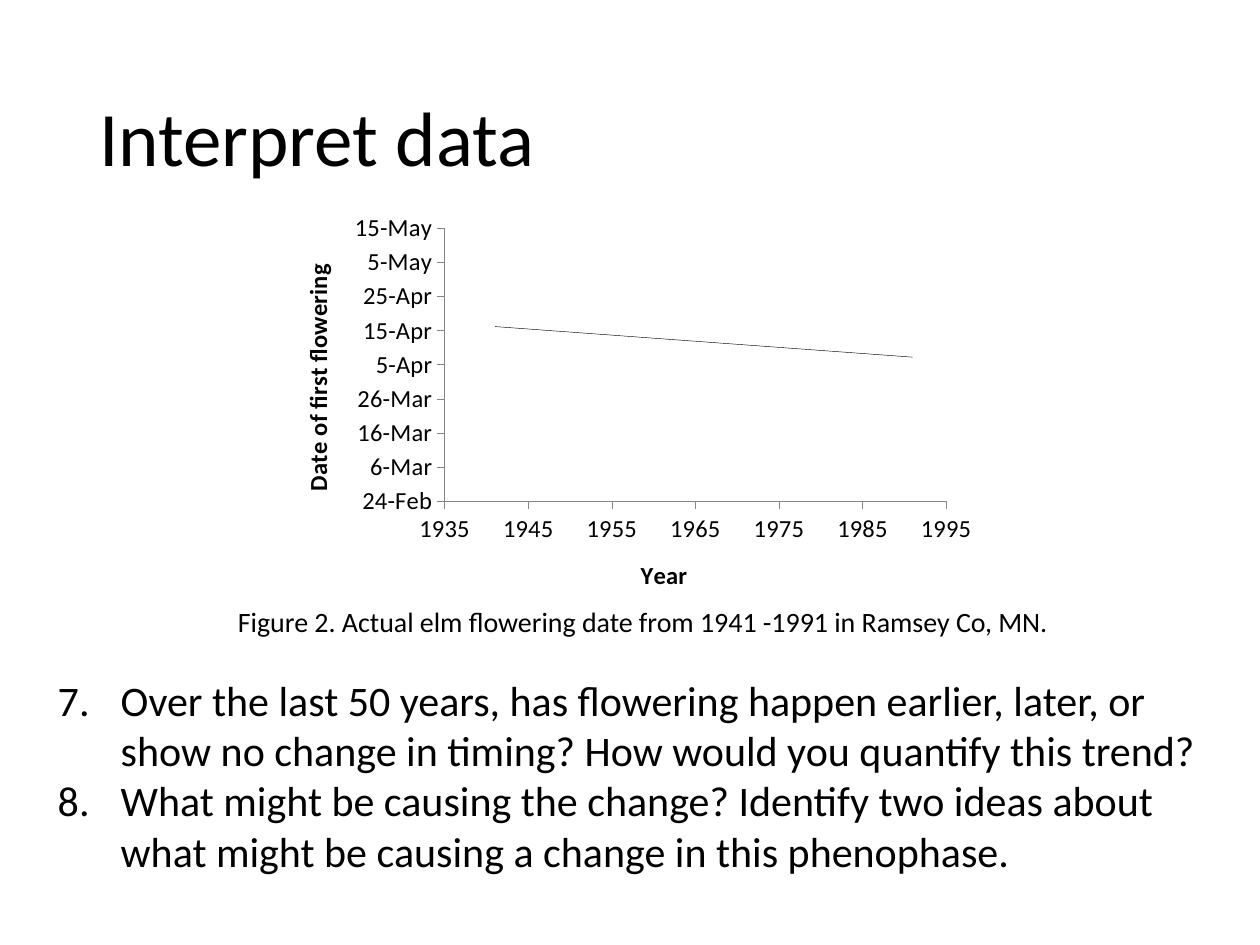
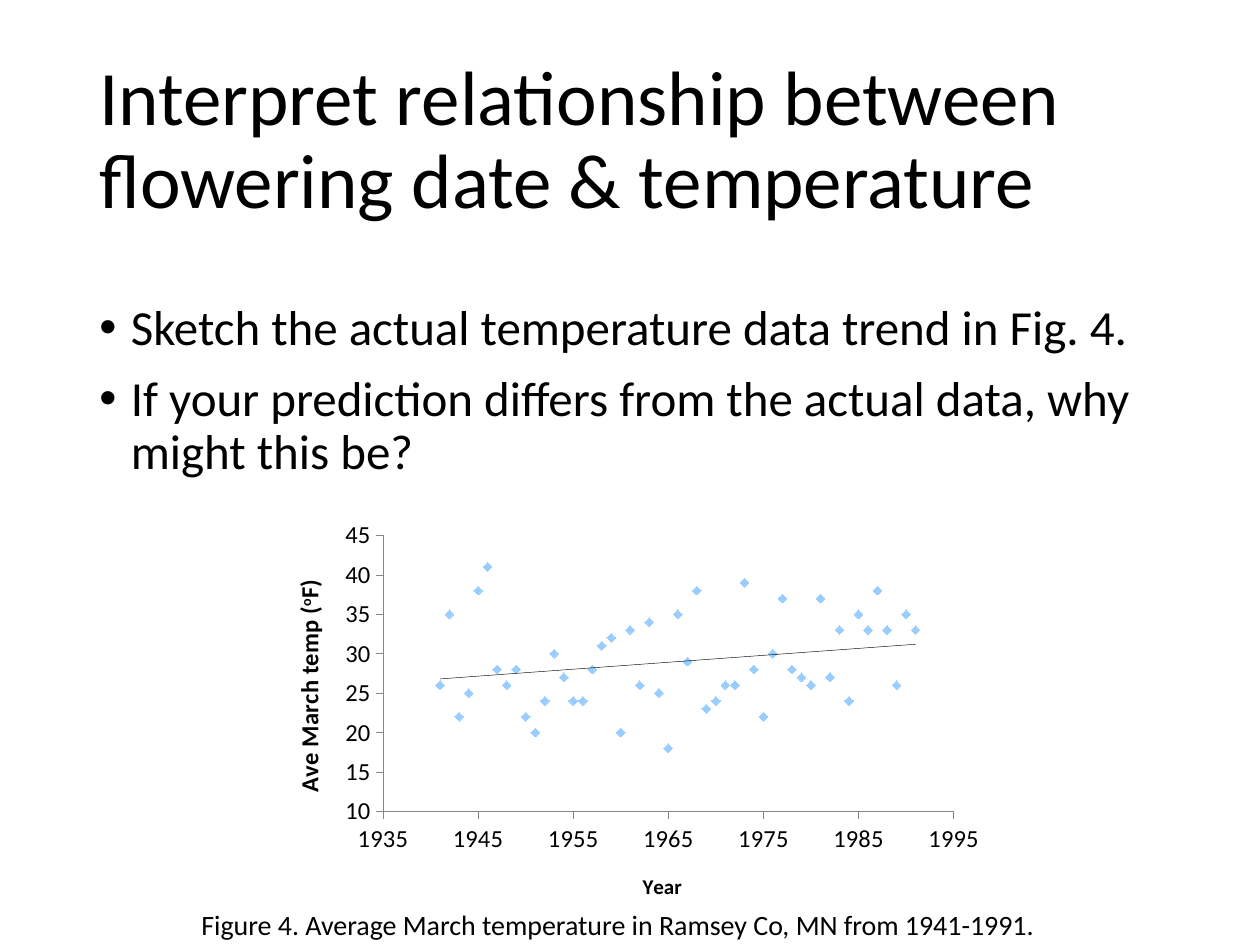
from lxml import etree
from pptx import Presentation
from pptx import util as u
from pptx.chart.data import XyChartData
from pptx.dml.color import RGBColor
from pptx.enum import chart as ch
from pptx.enum import text
from pptx.oxml import parse_xml
from pptx.oxml.ns import nsdecls, qn

BLACK, AXIS_GREY, SKY = "000000", "868686", "99CCFF"
HAIRLINE = u.Pt(0.25)
YEARS = range(1941, 1992)
MARCH_TEMPS = [
    26, 35, 22, 25, 38, 41, 28, 26, 28, 22, 20, 24, 30, 27, 24, 24, 28,
    31, 32, 20, 33, 26, 34, 25, 18, 35, 29, 38, 23, 24, 26, 26, 39, 28,
    22, 30, 37, 28, 27, 26, 37, 27, 33, 24, 35, 33, 38, 33, 26, 35, 33,
]
FEB_24 = 42790
FLOWERING_DATES = [round(FEB_24 + 51.2 - 0.18 * (year - 1941)) for year in YEARS]


def colour(hex_value):
    """Turn a hex string into a colour."""
    return RGBColor.from_string(hex_value)


def style_font(font, size, bold=False, hex_value=BLACK):
    """Give a font the deck's typeface with a size, weight and colour."""
    font.name, font.size, font.bold = "Calibri", u.Pt(size), bold
    font.color.rgb = colour(hex_value)


def add_run(paragraph, words, size, bold=False, superscript=False):
    """Append a formatted run to a paragraph."""
    run = paragraph.add_run()
    run.text = words
    style_font(run.font, size, bold)
    if superscript:
        run.font._element.set("baseline", "30000")


def set_list(paragraph, indent, bullet=None, start=None):
    """Give a paragraph a hanging indent with a bullet or a number."""
    props = paragraph._p.get_or_add_pPr()
    props.set("marL", str(u.Inches(indent)))
    props.set("indent", str(-u.Inches(indent)))
    if bullet:
        etree.SubElement(props, qn("a:buFont"), typeface="Arial")
        etree.SubElement(props, qn("a:buChar"), char=bullet)
    else:
        etree.SubElement(props, qn("a:buAutoNum"), type="arabicPeriod", startAt=str(start))


def place(parent, position, chart_size, left, top, *size):
    """Place a chart part by its offset, and its size if given, in inches."""
    width, height = chart_size
    parts = [("xMode", "edge"), ("yMode", "edge"), ("x", left / width), ("y", top / height)]
    if size:
        parts = [("layoutTarget", "inner"), *parts,
                 ("w", size[0] / width), ("h", size[1] / height)]
    body = "".join(f'<c:{tag} val="{value}"/>' for tag, value in parts)
    for old in parent.findall(qn("c:layout")):
        parent.remove(old)
    parent.insert(position, parse_xml(
        f"<c:layout {nsdecls('c')}><c:manualLayout>{body}</c:manualLayout></c:layout>"))


class Deck:
    """Hold the deck's style and its current slide."""

    def __init__(self):
        """Start an empty 10 by 7.5 inch presentation."""
        self.prs = Presentation()
        self.prs.slide_width, self.prs.slide_height = u.Inches(10), u.Inches(7.5)
        self.slide = None

    def new_slide(self, title):
        """Add a blank slide with its title."""
        self.slide = self.prs.slides.add_slide(self.prs.slide_layouts[6])
        self.add_text([title], (0.69, 0.4, 8.62, 1.45), size=44, spacing=0.9,
                      anchor=text.MSO_ANCHOR.MIDDLE)

    def add_text(self, lines, box, size, spacing=1.0, before=0,
                 anchor=text.MSO_ANCHOR.TOP, **list_format):
        """Add a text box with one paragraph per line."""
        frame = self.slide.shapes.add_textbox(*map(u.Inches, box)).text_frame
        frame.word_wrap, frame.vertical_anchor = True, anchor
        for index, line in enumerate(lines):
            paragraph = frame.add_paragraph() if index else frame.paragraphs[0]
            paragraph.line_spacing, paragraph.space_before = spacing, u.Pt(before)
            add_run(paragraph, line, size)
            if list_format:
                set_list(paragraph, **list_format)

    def add_caption(self, caption, box):
        """Add a figure caption."""
        self.add_text([caption], box, size=16, spacing=1.15)

    def style_axis(self, axis, chart_size, title, limits, step, title_at,
                   title_size=14, number_format="General"):
        """Set an axis's scale, line, labels and title of (words, superscript) pairs."""
        axis.minimum_scale, axis.maximum_scale = limits
        axis.major_unit = step
        axis.has_major_gridlines = False
        axis.major_tick_mark = ch.XL_TICK_MARK.OUTSIDE
        axis.minor_tick_mark = ch.XL_TICK_MARK.NONE
        axis.tick_label_position = ch.XL_TICK_LABEL_POSITION.LOW
        axis.format.line.color.rgb = colour(AXIS_GREY)
        axis.format.line.width = HAIRLINE
        style_font(axis.tick_labels.font, 14)
        axis.tick_labels.number_format = number_format
        axis.tick_labels.number_format_is_linked = False
        paragraph = axis.axis_title.text_frame.paragraphs[0]
        for words, superscript in title:
            add_run(paragraph, words, title_size, bold=True, superscript=superscript)
        place(axis.axis_title.element, 1, chart_size, *title_at)

    def add_trend_chart(self, values, box, plot, year_axis, value_axis, marker=None):
        """Add a scatter chart by year with a linear trend line."""
        data = XyChartData()
        points = data.add_series("Series 1")
        for year, value in zip(YEARS, values):
            points.add_data_point(year, value)
        chart = self.slide.shapes.add_chart(
            ch.XL_CHART_TYPE.XY_SCATTER, *map(u.Inches, box), data).chart
        chart.has_title = chart.has_legend = False
        style_font(chart.font, 10)
        chart.plots[0].vary_by_categories = False
        series = chart.plots[0].series[0]
        series.format.line.fill.background()
        series.marker.style = ch.XL_MARKER_STYLE.DIAMOND if marker else ch.XL_MARKER_STYLE.NONE
        if marker:
            series.marker.size = 5
            series.marker.format.fill.solid()
            series.marker.format.fill.fore_color.rgb = colour(marker)
            series.marker.format.line.fill.background()
        trend = parse_xml(
            f'<c:trendline {nsdecls("c", "a")}><c:spPr><a:ln w="{HAIRLINE}"><a:solidFill>'
            f'<a:srgbClr val="{BLACK}"/></a:solidFill></a:ln></c:spPr>'
            '<c:trendlineType val="linear"/><c:dispRSqr val="0"/><c:dispEq val="0"/></c:trendline>')
        chart.element.find(f".//{qn('c:xVal')}").addprevious(trend)
        chart_size = box[2:]
        self.style_axis(chart.category_axis, chart_size, [("Year", False)], (1935, 1995), 10,
                        **year_axis)
        self.style_axis(chart.value_axis, chart_size, **value_axis)
        place(chart.element.find(f".//{qn('c:plotArea')}"), 0, chart_size, *plot)


def main():
    """Build both slides and save them."""
    deck = Deck()

    deck.new_slide("Interpret data")
    deck.add_caption("Figure 2. Actual elm flowering date from 1941 -1991 in Ramsey Co, MN.",
                     (1.79, 4.71, 6.77, 0.39))
    deck.add_trend_chart(
        FLOWERING_DATES, (2.17, 1.62, 5.65, 3.28), plot=(1.36, 0.19, 3.98, 2.17),
        year_axis=dict(title_at=(2.88, 2.77)),
        value_axis=dict(title=[("Date of first flowering", False)], limits=(FEB_24, FEB_24 + 80),
                        step=10, title_at=(0.18, 0.44), number_format="d-mmm"))
    deck.add_text(
        ["Over the last 50 years, has flowering happen earlier, later, or show no change in "
         "timing? How would you quantify this trend?",
         "What might be causing the change? Identify two ideas about what might be causing a "
         "change in this phenophase."],
        (0.36, 5.3, 9.48, 1.72), size=24, indent=0.5, start=7)

    deck.new_slide("Interpret relationship between flowering date & temperature")
    deck.add_text(
        ["Sketch the actual temperature data trend in Fig. 4.",
         "If your prediction differs from the actual data, why might this be?"],
        (0.69, 2.36, 8.62, 4.39), size=28, spacing=0.9, before=10, indent=0.25, bullet="•")
    deck.add_caption("Figure 4. Average March temperature in Ramsey Co, MN from 1941-1991.",
                     (1.5, 7.11, 7.01, 0.39))
    deck.add_trend_chart(
        MARCH_TEMPS, (2.11, 4.06, 5.78, 3.25), plot=(0.93, 0.19, 4.53, 2.19), marker=SKY,
        year_axis=dict(title_at=(2.96, 2.83), title_size=12),
        value_axis=dict(title=[("Ave March temp (", False), ("o", True), ("F)", False)],
                        limits=(10, 45), step=5, title_at=(0.18, 0.51)))

    deck.prs.save("out.pptx")


if __name__ == "__main__":
    main()
